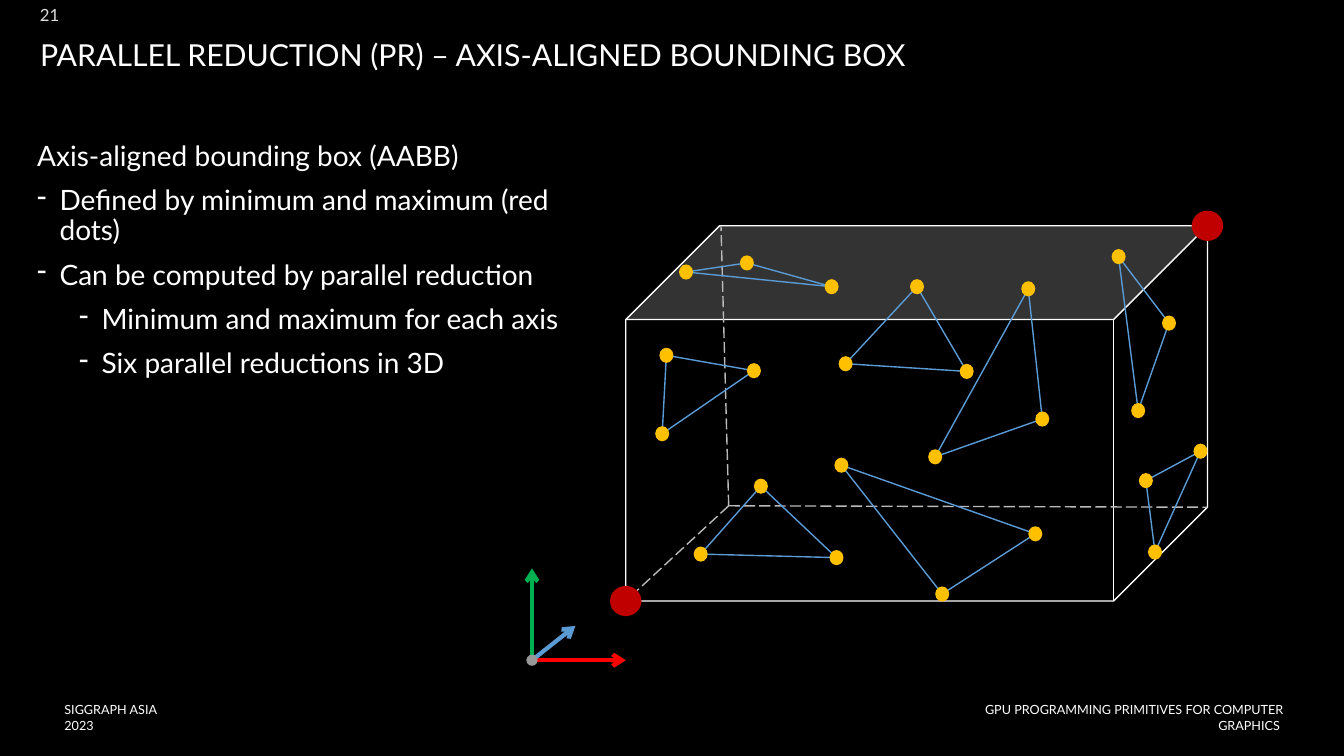
from itertools import combinations

from lxml import etree
from pptx import Presentation
from pptx import util as u
from pptx.dml.color import RGBColor
from pptx.enum import dml, shapes, text
from pptx.oxml import ns

WHITE, BLACK, GREY = "FFFFFF", "000000", "BABABA"
BLUE, YELLOW, DARK_RED = "5B9BD5", "FFC000", "C00000"
LEFT, RIGHT = text.PP_ALIGN.LEFT, text.PP_ALIGN.RIGHT
TOP, MIDDLE = text.MSO_ANCHOR.TOP, text.MSO_ANCHOR.MIDDLE

STATEMENTS = [
    ("Axis-aligned bounding box (AABB)", None),
    ("Defined by minimum and maximum (red dots)", 0),
    ("Can be computed by parallel reduction", 0),
    ("Minimum and maximum for each axis", 1),
    ("Six parallel reductions in 3D", 1),
]
TRIANGLES = [
    [(43, 33), (86.5, 26.5), (147, 43.5)],
    [(29, 92.5), (91.5, 103.5), (26, 148.5)],
    [(53.5, 234.5), (96.5, 186), (150.5, 237)],
    [(157, 98.5), (208, 43.5), (243.5, 104)],
    [(154, 171), (226, 263), (292.5, 220)],
    [(287.5, 45), (221, 165), (297.5, 138)],
    [(352, 22), (388, 69.5), (366, 132)],
    [(410.5, 161), (371.5, 182), (378, 233)],
]


def color(code):
    """Turn a hex string into a colour."""
    return RGBColor.from_string(code)


def add_run(paragraph, words, size, code=WHITE):
    """Append one run of Lato text."""
    run = paragraph.add_run()
    run.text = words
    run.font.name = "Lato"
    run.font.size = u.Pt(size)
    run.font.color.rgb = color(code)


def add_frame(slide, box, anchor=MIDDLE, inset=0.0):
    """Add a wrapping text box and return its text frame."""
    frame = slide.shapes.add_textbox(*map(u.Pt, box)).text_frame
    frame.word_wrap = True
    frame.vertical_anchor = anchor
    frame.margin_left = frame.margin_right = u.Pt(inset)
    frame.margin_top = frame.margin_bottom = u.Pt(inset)
    return frame


def add_label(slide, box, words, size, align=LEFT, code=WHITE, inset=0.0):
    """Add a text box holding one paragraph."""
    paragraph = add_frame(slide, box, inset=inset).paragraphs[0]
    paragraph.alignment = align
    add_run(paragraph, words, size, code)


def add_statements(slide, box):
    """Write the dashed list beside the drawing."""
    frame = add_frame(slide, box, TOP, 3.6)
    for index, (words, level) in enumerate(STATEMENTS):
        paragraph = frame.add_paragraph() if index else frame.paragraphs[0]
        if level is not None:
            paragraph.level = level
            properties = paragraph._p.get_or_add_pPr()
            properties.set("marL", str(u.Pt(16 + 30 * level)))
            properties.set("indent", str(u.Pt(-16)))
            etree.SubElement(properties, ns.qn("a:buChar"), char="-")
        paragraph.line_spacing = 0.9
        if index:
            paragraph.space_before = u.Pt(10)
        add_run(paragraph, words, 20)


def add_line(slide, start, end, code, width=1, dashed=False, arrow=False):
    """Draw a straight line between two points."""
    line = slide.shapes.add_connector(
        shapes.MSO_CONNECTOR.STRAIGHT, *map(u.Pt, (*start, *end)))
    line.line.color.rgb = color(code)
    line.line.width = u.Pt(width)
    if dashed:
        line.line.dash_style = dml.MSO_LINE.LONG_DASH
    if arrow:
        etree.SubElement(line.line._get_or_add_ln(), ns.qn("a:tailEnd"), type="arrow")
    etree.SubElement(line._element.spPr, ns.qn("a:effectLst"))


def add_dot(slide, center, width, height, code):
    """Draw a filled ellipse around a point."""
    x, y = center
    dot = slide.shapes.add_shape(
        shapes.MSO_SHAPE.OVAL,
        *map(u.Pt, (x - width / 2, y - height / 2, width, height)))
    dot.shadow.inherit = False
    dot.fill.solid()
    dot.fill.fore_color.rgb = color(code)
    dot.line.fill.background()


def add_bounding_box(slide, box):
    """Draw the cube, its hidden edges, the triangles and the extreme corners."""
    left, top, width, height = box
    depth = height / 4
    cube = slide.shapes.add_shape(shapes.MSO_SHAPE.CUBE, *map(u.Pt, box))
    cube.shadow.inherit = False
    cube.adjustments[0] = 0.25
    cube.fill.solid()
    cube.fill.fore_color.rgb = color(BLACK)
    cube.line.color.rgb = color(WHITE)
    cube.line.width = u.Pt(1)

    minimum, maximum = (left, top + height), (left + width, top)
    hidden_corner = (left + depth + 6.5, top + height - depth - 1)
    for corner in (minimum, (left + depth + 1, top),
                   (left + width, top + height - depth)):
        add_line(slide, hidden_corner, corner, GREY, dashed=True)

    for triangle in TRIANGLES:
        vertices = [(left + x, top + y) for x, y in triangle]
        for start, end in combinations(vertices, 2):
            add_line(slide, start, end, BLUE)
        for vertex in vertices:
            add_dot(slide, vertex, 10, 10.8, YELLOW)
    for extreme in (minimum, maximum):
        add_dot(slide, extreme, 22.5, 21.6, DARK_RED)


def add_axes(slide, box):
    """Draw the three coordinate axes from the lower left of the box."""
    left, top, width, height = box
    origin = (left, top + height)
    for tip, code in (((left, top), "00B050"),
                      ((left + width, top + height), "FF0000"),
                      ((left + 31, top + height - 24.5), BLUE)):
        add_line(slide, origin, tip, code, 3, arrow=True)
    add_dot(slide, origin, 8, 8, "989898")


def add_heading(slide, box):
    """Place the slide number above the title."""
    left, top, width, height = box
    add_label(slide, (left + 3, top, 14.4, 14.4), "21", 12, RIGHT, "DDDDDD")
    add_label(slide, (left, top + 20, width, height - 20),
              "PARALLEL REDUCTION (PR) – AXIS-ALIGNED BOUNDING BOX", 21.6, inset=3.6)


def add_footer(slide, box):
    """Place the event on the left and the course on the right."""
    left, top, width, height = box
    add_label(slide, (left, top, 77.8, height), "SIGGRAPH ASIA 2023", 9)
    add_label(slide, (left + width - 227.5, top, 227.5, height),
              "GPU PROGRAMMING PRIMITIVES FOR COMPUTER GRAPHICS ", 9, RIGHT)


def main():
    """Build and save the slide."""
    deck = Presentation()
    deck.slide_width, deck.slide_height = u.Pt(960), u.Pt(540)
    slide = deck.slides.add_slide(deck.slide_layouts[6])
    slide.background.fill.solid()
    slide.background.fill.fore_color.rgb = color(BLACK)
    add_footer(slide, (46, 507, 870.5, 10.8))
    add_heading(slide, (25, 3.6, 914.5, 50.4))
    add_statements(slide, (23, 98, 417.5, 269))
    add_bounding_box(slide, (447, 161.3, 415.5, 268))
    add_axes(slide, (380, 406, 67, 65.6))
    deck.save("out.pptx")


if __name__ == "__main__":
    main()
